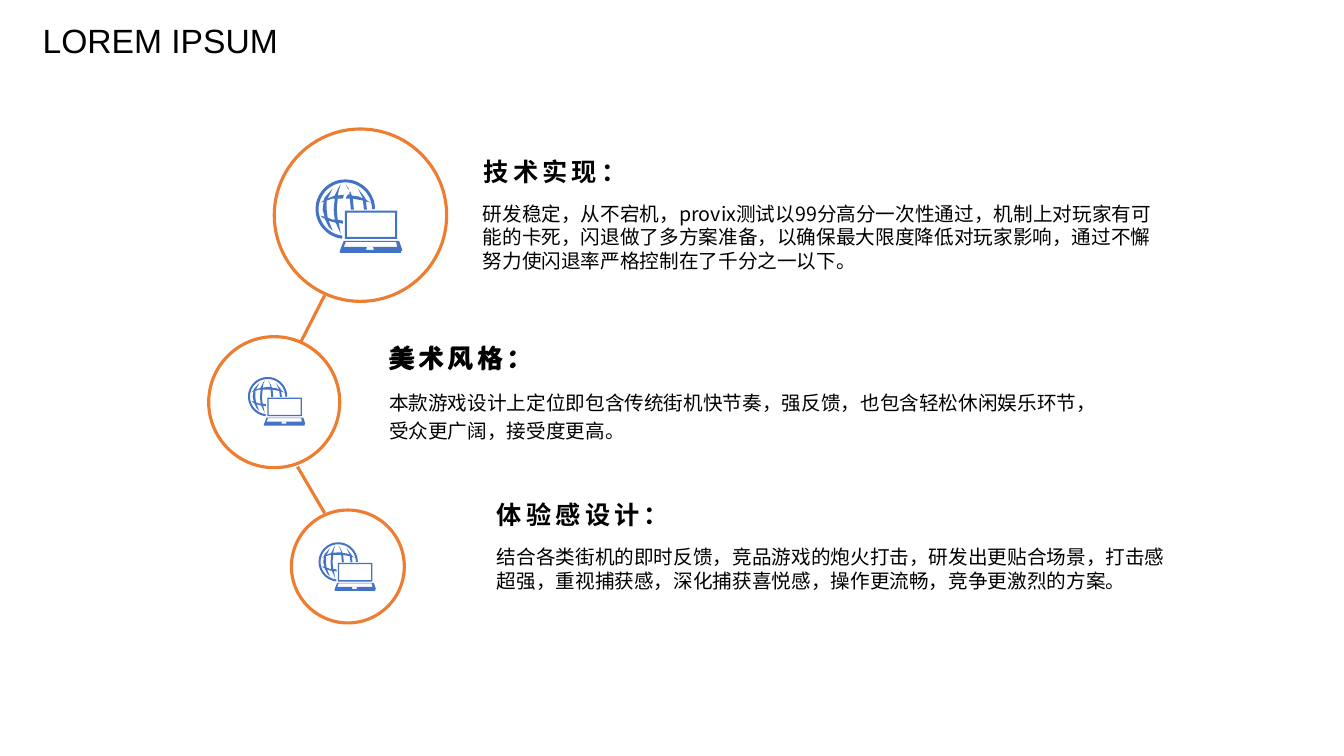
import math
from lxml import etree
from pptx import Presentation
from pptx import util as u
from pptx.dml.color import RGBColor
from pptx.enum import shapes, text
from pptx.oxml.ns import qn

INK = {"ring": "ED7D31", "icon": "4472C4", "paper": "FFFFFF", "text": "000000"}
SANS, CJK = "Arial", "Noto Sans CJK SC"

# Content: words with left, top, width, height in inches
TITLE = ("LOREM IPSUM", (0.31, 0.15, 2.56, 0.5))
HEADS = [
    ("技术实现：", 4.7, 1.31),
    ("美术风格：", 3.77, 3.16),
    ("美术风格：", 3.76, 3.17),
    ("体验感设计：", 4.83, 4.71),
]
NOTES = [
    ("研发稳定，从不宕机，provix测试以99分高分一次性通过，机制上对玩家有可能的卡死，"
     "闪退做了多方案准备，以确保最大限度降低对玩家影响，通过不懈努力使闪退率严格控制在了千分之一以下。",
     (4.69, 2, 6.86, 0.69), 1),
    ("本款游戏设计上定位即包含传统街机快节奏，强反馈，也包含轻松休闲娱乐环节，受众更广阔，接受度更高。",
     (3.76, 3.83, 7.18, 0.52), 1.2),
    ("结合各类街机的即时反馈，竞品游戏的炮火打击，研发出更贴合场景，打击感超强，"
     "重视捕获感，深化捕获喜悦感，操作更流畅，竞争更激烈的方案。",
     (4.83, 5.41, 6.96, 0.52), 1),
]
# Circle left, top, diameter; icon left, top, scale
NODES = [
    ((2.72, 1.28, 1.71), (3.13, 1.78, 1)),
    ((2.07, 3.34, 1.3), (2.46, 3.74, 0.66)),
    ((2.89, 5.06, 1.12), (3.16, 5.38, 0.66)),
]
LINKS = [(3.22, 2.93, 2.98, 3.4), (2.95, 4.63, 3.22, 5.09)]

# Icon outlines, in hundredths of an inch
LAPTOP = [
    [(24, 71), (85, 71), (85, 73), (24, 73)],
    [(51, 67), (50, 70), (58, 70), (57, 67)],
    [(30, 62), (28, 67), (81, 67), (80, 62)],
    [(28, 61), (83, 61), (86, 70), (86, 71), (24, 71)],
    [(31, 33), (31, 57), (79, 57), (79, 33)],
    [(29, 31), (81, 31), (81, 59), (29, 59)],
]
GRID = [
    [(19, 19), (17, 19), (11, 21), (11, 30), (12, 38), (17, 40), (19, 40), (18, 30)],
    [(25, 5), (23, 11), (22, 16), (30, 15), (34, 15), (33, 11), (30, 5), (32, 8),
     (34, 11), (36, 16), (43, 17), (47, 19), (42, 9), (49, 18), (50, 20), (54, 23),
     (55, 23), (50, 22), (51, 30), (48, 30), (47, 21), (42, 20), (37, 19), (38, 30),
     (35, 30), (34, 19), (30, 19), (22, 19), (21, 30), (22, 40), (27, 41), (27, 44),
     (23, 43), (25, 54), (20, 43), (16, 42), (13, 41), (17, 51), (15, 49), (13, 47),
     (10, 41), (9, 39), (7, 38), (5, 36), (9, 37), (7, 30), (8, 22), (5, 23), (8, 21),
     (9, 18), (17, 9), (12, 19), (17, 17), (19, 16), (22, 10), (23, 8)],
]
SHINE = [(42, 7), (39, 7), (36, 8), (34, 9), (32, 11), (30, 14), (28, 16), (27, 20),
         (27, 23), (28, 24), (29, 24), (30, 23), (30, 20), (30, 18), (32, 15), (33, 13),
         (35, 11), (37, 10), (40, 9), (42, 9), (43, 8)]


def arc(rad, mid=29.5, sweep=264, step=6):
    turns = [math.radians(a) for a in range(0, sweep + 1, step)]
    return [(mid + rad * math.cos(t), mid - rad * math.sin(t)) for t in turns]


RIM = arc(29.5) + arc(26.5)[::-1]

prs = Presentation()
prs.slide_width, prs.slide_height = u.Inches(13.33), u.Inches(7.5)
slide = prs.slides.add_slide(prs.slide_layouts[6])
draw = slide.shapes


def tint(name):
    return RGBColor.from_string(INK[name])


def apply(obj, form):
    for key, val in form.items():
        setattr(obj, key, val)


def write(words, box, font, frame, para, gap=0):
    tf = draw.add_textbox(*map(u.Inches, box)).text_frame
    apply(tf, frame)
    par = tf.paragraphs[0]
    apply(par, para)
    run = par.add_run()
    run.text = words
    apply(run.font, font)
    run.font.color.rgb = tint("text")
    props = run.font._element
    if gap:
        props.set("spc", str(gap * 100))
    etree.SubElement(props, qn("a:ea")).set("typeface", font["name"])


def edge(line):
    line.color.rgb = tint("ring")
    line.width = u.Pt(2.25)


def trace(paths, left, top, scale, fill):
    pen = None
    for path in paths:
        pts = [(x * 10, y * 10) for x, y in path]
        if pen:
            pen.move_to(*pts[0])
        else:
            pen = draw.build_freeform(*pts[0], scale=u.Inches(0.001) * scale)
        pen.add_line_segments(pts[1:], close=True)
    form = pen.convert_to_shape(u.Inches(left), u.Inches(top))
    form.shadow.inherit = False
    form.fill.solid()
    form.fill.fore_color.rgb = tint(fill)
    form.line.fill.background()


# Circles and the links between them
for (left, top, size), _ in NODES:
    disc = draw.add_shape(shapes.MSO_SHAPE.OVAL, *map(u.Inches, (left, top, size, size)))
    disc.shadow.inherit = False
    disc.fill.solid()
    disc.fill.fore_color.rgb = tint("paper")
    edge(disc.line)
for ends in LINKS:
    link = draw.add_connector(shapes.MSO_CONNECTOR.STRAIGHT, *map(u.Inches, ends))
    edge(link.line)
    etree.SubElement(link._element.spPr, qn("a:effectLst"))

# Globe and laptop icons, with a highlight on the large one
for _, (left, top, scale) in NODES:
    trace(LAPTOP + GRID + [RIM], left, top, scale, "icon")
    if scale == 1:
        trace([SHINE], left, top, scale, "paper")

# Title, headings and notes
MID = text.MSO_ANCHOR.MIDDLE
write(*TITLE, {"name": SANS, "size": u.Pt(24)},
      {"word_wrap": False, "vertical_anchor": MID},
      {"alignment": text.PP_ALIGN.CENTER})
for words, left, top in HEADS:
    write(words, (left, top, 3.33, 0.67),
          {"name": CJK, "size": u.Pt(18), "bold": True},
          {"word_wrap": True, "vertical_anchor": MID, "margin_bottom": 0},
          {"line_spacing": 1.2}, gap=3)
for words, box, pitch in NOTES:
    write(words, box, {"name": CJK, "size": u.Pt(14)},
          {"word_wrap": True, "margin_top": 0}, {"line_spacing": pitch})

prs.save("out.pptx")
